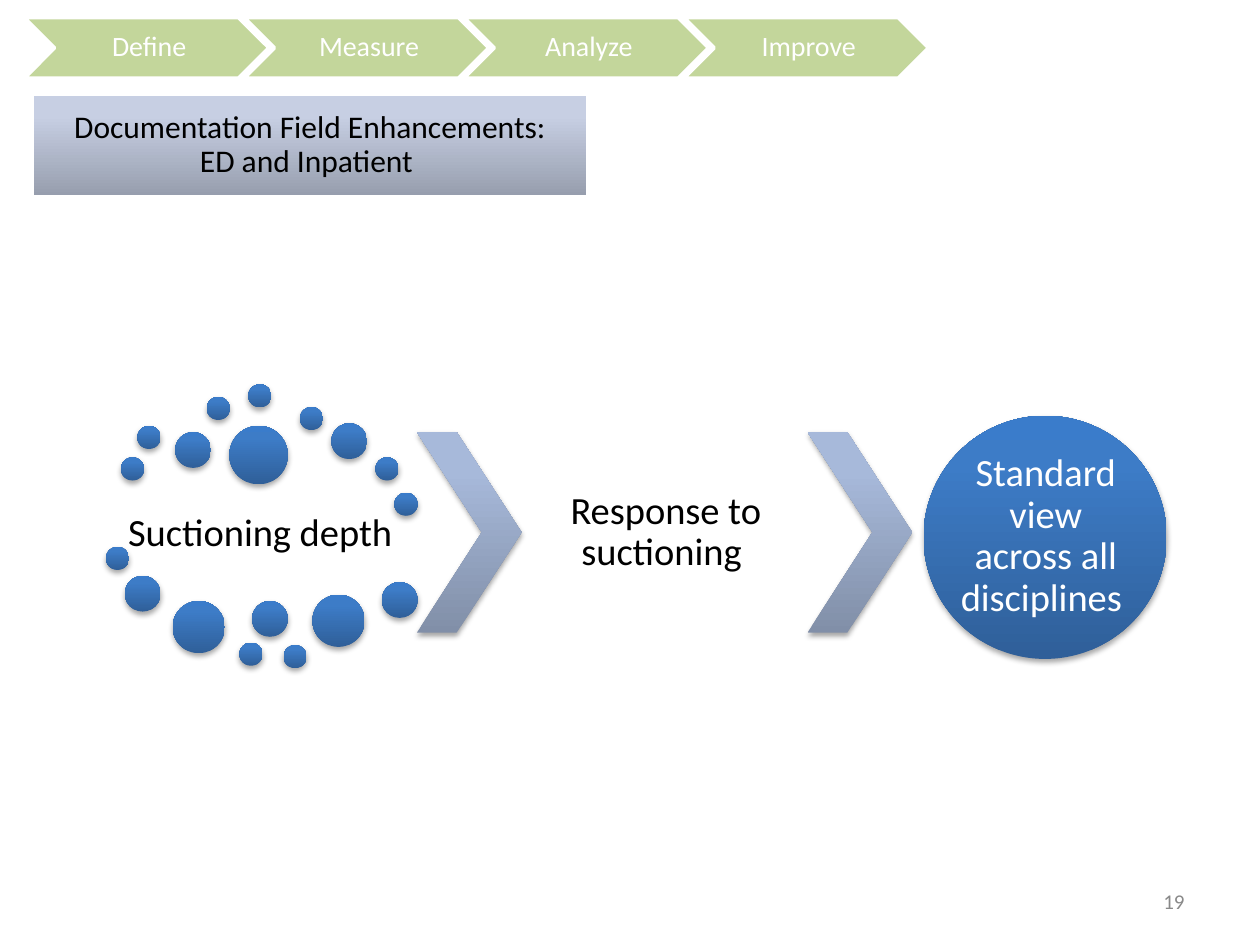
import copy
from dataclasses import dataclass

from lxml import etree
from pptx import Presentation
from pptx import util as u
from pptx.dml.color import RGBColor
from pptx.enum import shapes, text
from pptx.oxml import ns

# Slide grid: 100 columns by 75 rows of square cells
COLUMNS, ROWS = 100, 75
CELL = u.Inches(0.1)


@dataclass(frozen=True)
class Theme:
    font: str = "Calibri"
    white: str = "FFFFFF"
    black: str = "000000"
    grey: str = "898989"
    green: str = "C3D69B"
    # Gradients run from bottom to top: start, at 80 %, end
    blue: tuple = ("2F5F99", "3D7CC7", "3A7CCB")
    steel: tuple = ("818FA8", "A7B9DA", "A7BADC")
    pale: tuple = ("979EAE", "C7CFE3", "C8D0E4")
    title_size: int = 18
    step_size: int = 16
    body_size: int = 22
    number_size: int = 12


@dataclass(frozen=True)
class Box:
    left: float
    top: float
    width: float
    height: float

    def emu(self) -> tuple:
        return tuple(cells(v) for v in (self.left, self.top, self.width, self.height))


@dataclass(frozen=True)
class Dot:
    left: float
    top: float
    size: float


THEME = Theme()
CENTER, RIGHT = text.PP_ALIGN.CENTER, text.PP_ALIGN.RIGHT

# Phase banner
STEPS = ("Define", "Measure", "Analyze", "Improve")
FIRST_STEP = Box(1.94, 1.4, 19.4, 4.8)
STEP_PITCH = 17.45

# Dots scattered around the first topic, in three sizes plus the top one
SMALL, MEDIUM, LARGE, LARGEST = 1.84, 2.84, 4.14, 4.64
DOTS = (
    Dot(9.6, 36.3, SMALL), Dot(10.9, 33.8, SMALL), Dot(13.9, 34.3, MEDIUM),
    Dot(16.4, 31.5, SMALL), Dot(19.7, 30.5, SMALL), Dot(23.8, 32.3, SMALL),
    Dot(26.3, 33.6, MEDIUM), Dot(29.8, 36.3, SMALL), Dot(31.3, 39.1, SMALL),
    Dot(18.2, 33.8, LARGEST), Dot(8.4, 43.4, SMALL), Dot(9.9, 45.7, MEDIUM),
    Dot(13.7, 47.7, LARGE), Dot(19, 51, SMALL), Dot(20, 47.7, MEDIUM),
    Dot(22.5, 51.2, SMALL), Dot(24.8, 47.2, LARGE), Dot(30.3, 46.2, MEDIUM),
)
ARROWS = (Box(33.1, 34.3, 8.3, 15.9), Box(64.1, 34.3, 8.3, 15.9))
RESULT = Box(73.3, 33, 19.3, 19.3)


def cells(count: float) -> int:
    return round(count * CELL)


def write(shape, words: str, size: int, color: str, insets: tuple,
          align=CENTER, spacing: float = 0.9) -> None:
    """Fill a shape with one middle-anchored paragraph."""
    frame = shape.text_frame
    frame.word_wrap = True
    frame.vertical_anchor = text.MSO_ANCHOR.MIDDLE
    (frame.margin_left, frame.margin_top,
     frame.margin_right, frame.margin_bottom) = map(cells, insets)
    paragraph = frame.paragraphs[0]
    paragraph.text = words
    paragraph.alignment = align
    paragraph.line_spacing = spacing
    paragraph.font.name = THEME.font
    paragraph.font.size = u.Pt(size)
    paragraph.font.color.rgb = RGBColor.from_string(color)


def add_label(slide, box: Box, words: str, size: int, color: str,
              insets: tuple, **options):
    shape = slide.shapes.add_textbox(*box.emu())
    write(shape, words, size, color, insets, **options)
    return shape


def paint_gradient(shape, colors: tuple) -> None:
    shape.fill.gradient()
    shape.fill.gradient_angle = 90
    first = shape._element.spPr.find(".//" + ns.qn("a:gs"))
    first.addnext(copy.deepcopy(first))
    for stop, color, position in zip(shape.fill.gradient_stops, colors, (0, 0.8, 1)):
        stop.color.rgb = RGBColor.from_string(color)
        stop.position = position


def add_soft_shadow(shape) -> None:
    shape.shadow.inherit = False
    effects = shape._element.spPr.find(ns.qn("a:effectLst"))
    shadow = etree.SubElement(effects, ns.qn("a:outerShdw"), blurRad="40000",
                              dist="23000", dir="5400000", rotWithShape="0")
    color = etree.SubElement(shadow, ns.qn("a:srgbClr"), val=THEME.black)
    etree.SubElement(color, ns.qn("a:alpha"), val="35000")


def add_glossy(slide, kind, box: Box, colors: tuple):
    shape = slide.shapes.add_shape(kind, *box.emu())
    paint_gradient(shape, colors)
    shape.line.fill.background()
    add_soft_shadow(shape)
    return shape


def add_step(slide, box: Box, words: str) -> None:
    left, top, width, height = box.emu()
    right, bottom, notch = left + width, top + height, height // 2
    builder = slide.shapes.build_freeform(left, top)
    builder.add_line_segments([
        (right - notch, top), (right, top + notch), (right - notch, bottom),
        (left, bottom), (left + notch, top + notch),
    ])
    shape = builder.convert_to_shape()
    shape.shadow.inherit = False
    shape.fill.solid()
    shape.fill.fore_color.rgb = RGBColor.from_string(THEME.green)
    shape.line.color.rgb = RGBColor.from_string(THEME.white)
    shape.line.width = u.Pt(2)
    write(shape, words, THEME.step_size, THEME.white, (3.1, 0.2, 2.7, 0.2))


def main() -> None:
    presentation = Presentation()
    presentation.slide_width = COLUMNS * CELL
    presentation.slide_height = ROWS * CELL
    slide = presentation.slides.add_slide(presentation.slide_layouts[6])

    # Title and slide number
    title = add_label(slide, Box(2.7, 7.6, 43.8, 7.9),
                      "Documentation Field Enhancements:\vED and Inpatient ",
                      THEME.title_size, THEME.black, (1.4,) * 4)
    paint_gradient(title, THEME.pale)
    add_label(slide, Box(71.7, 69.5, 23.3, 4), "19", THEME.number_size,
              THEME.grey, (1, 0.5, 1, 0.5), align=RIGHT, spacing=1.0)

    # Phase banner
    for index, step in enumerate(STEPS):
        add_step(slide, Box(FIRST_STEP.left + index * STEP_PITCH, FIRST_STEP.top,
                            FIRST_STEP.width, FIRST_STEP.height), step)

    # Topics, dots and arrows
    add_label(slide, Box(9.7, 38.6, 22.6, 7.5), "Suctioning depth ",
              THEME.body_size, THEME.black, (0.3,) * 4)
    for dot in DOTS:
        add_glossy(slide, shapes.MSO_SHAPE.OVAL,
                   Box(dot.left, dot.top, dot.size, dot.size), THEME.blue)
    for box in ARROWS:
        arrow = add_glossy(slide, shapes.MSO_SHAPE.CHEVRON, box, THEME.steel)
        arrow.adjustments[0] = 0.62
    add_label(slide, Box(41.5, 34.3, 22.7, 15.9), "Response to suctioning ",
              THEME.body_size, THEME.black, (0.3,) * 4)

    # Result
    add_glossy(slide, shapes.MSO_SHAPE.OVAL, RESULT, THEME.blue)
    add_label(slide, Box(76.2, 35.8, 13.6, 13.6),
              "Standard view across all disciplines ",
              THEME.body_size, THEME.white, (0,) * 4)

    presentation.save("out.pptx")


if __name__ == "__main__":
    main()
